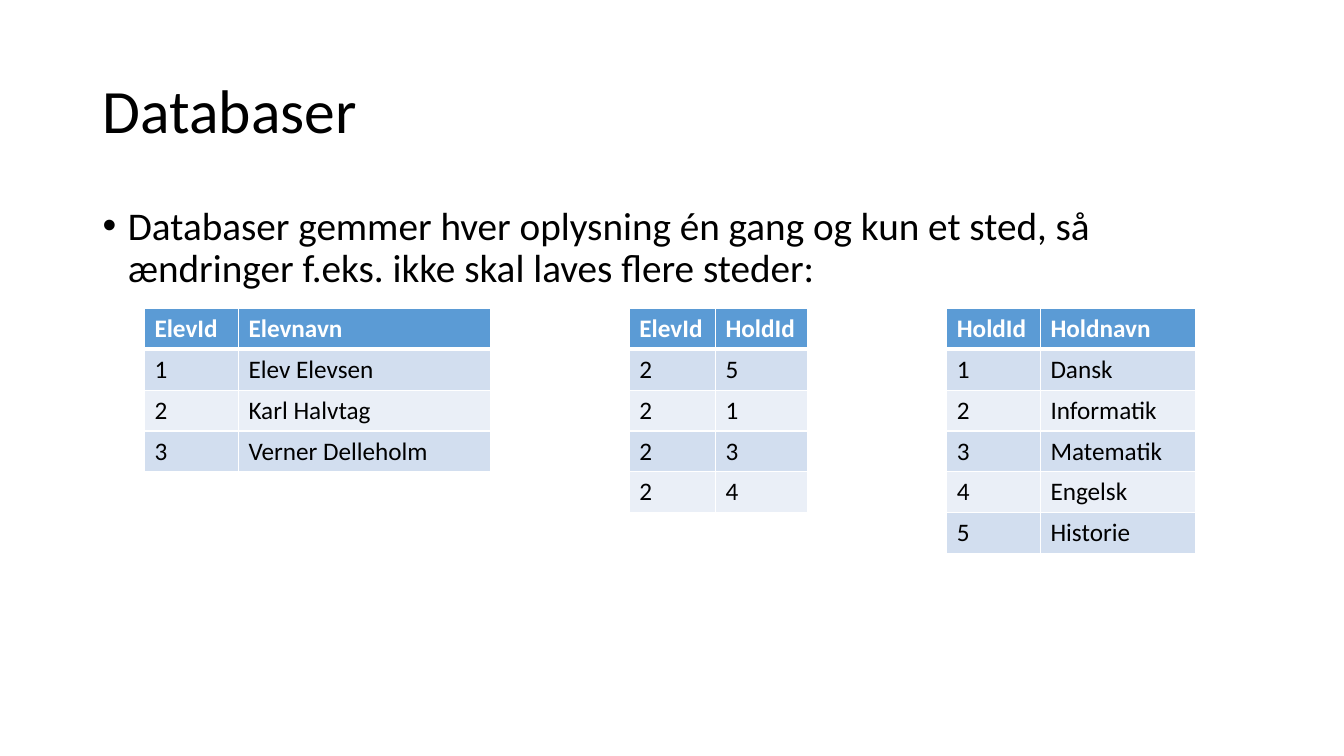
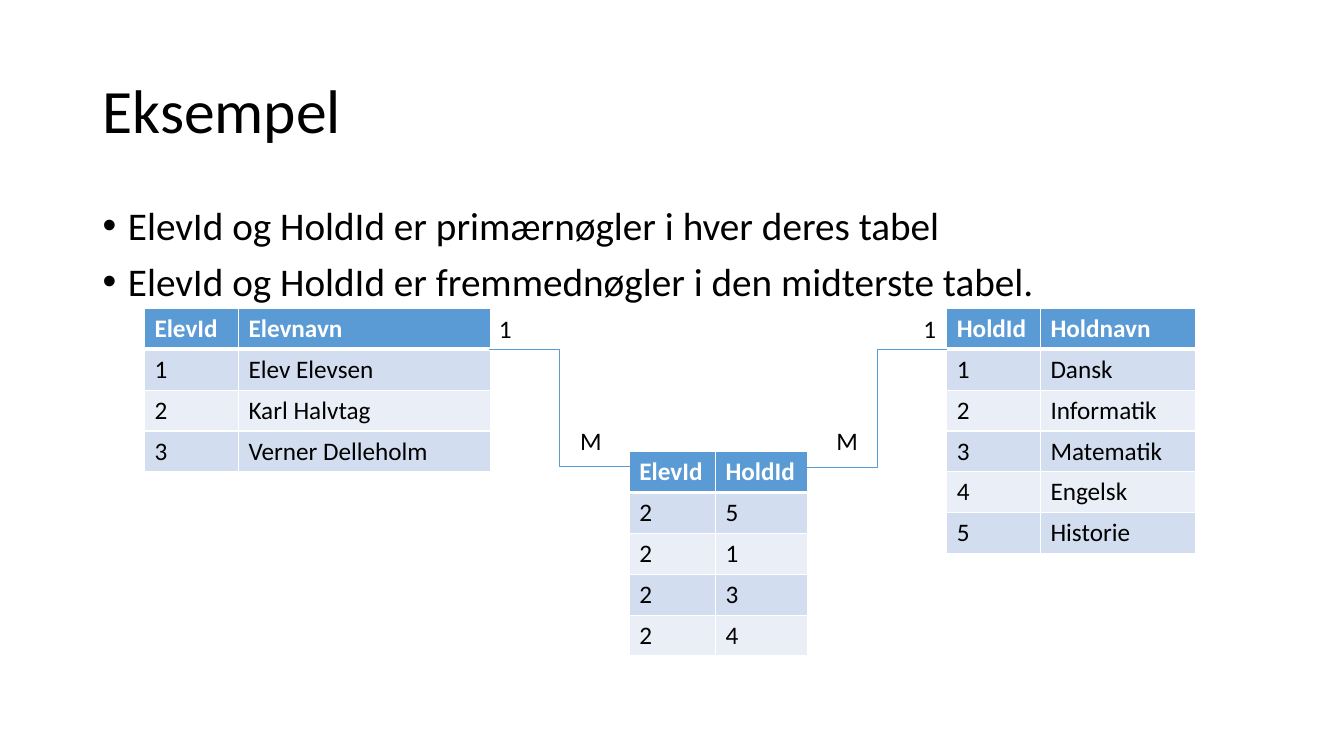
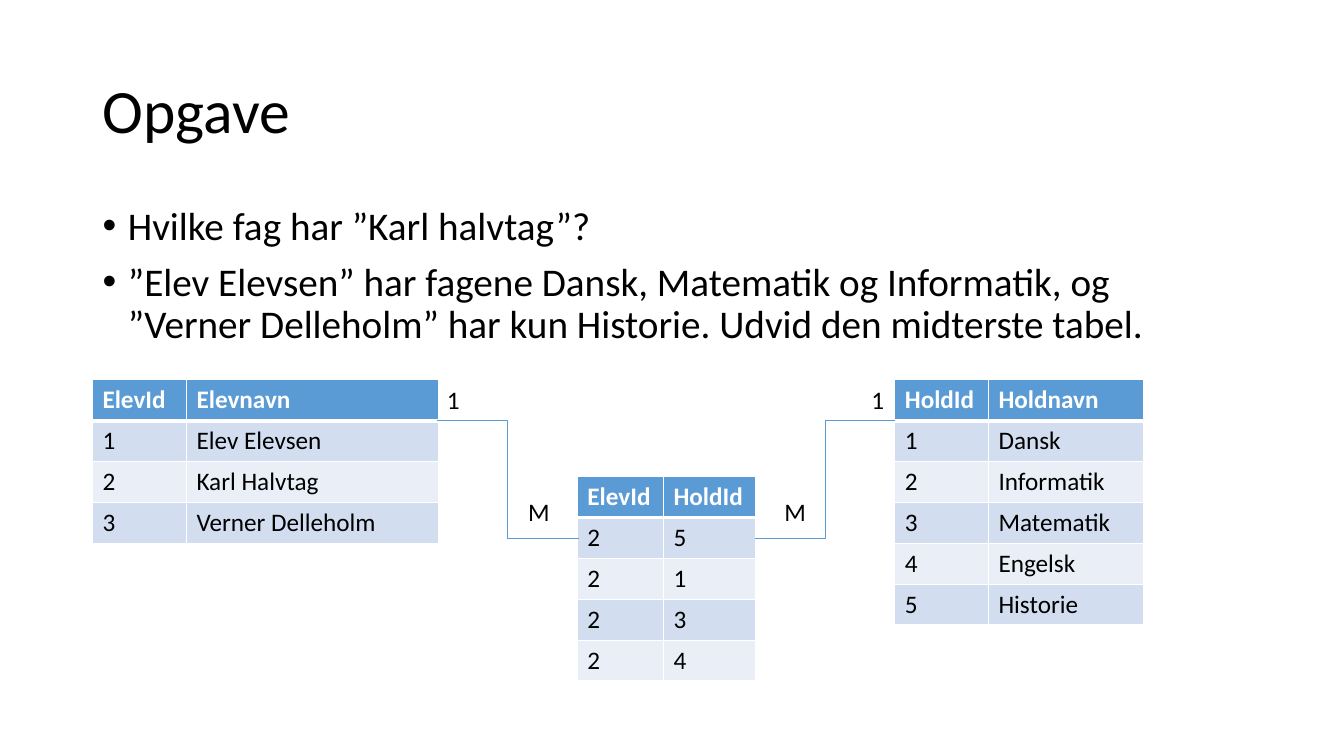
from lxml import etree
from pptx import Presentation
from pptx.dml.color import RGBColor
from pptx.enum.shapes import MSO_CONNECTOR
from pptx.enum.text import MSO_ANCHOR, MSO_AUTO_SIZE, PP_ALIGN
from pptx.oxml.ns import qn
from pptx.util import Cm, Pt

ELBOW = MSO_CONNECTOR.ELBOW
MIDDLE, TOP = MSO_ANCHOR.MIDDLE, MSO_ANCHOR.TOP
LEFT = PP_ALIGN.LEFT
NO_FIT, GROW = MSO_AUTO_SIZE.NONE, MSO_AUTO_SIZE.SHAPE_TO_FIT_TEXT

HUES = {"text": "000000", "white": "FFFFFF", "head": "5B9BD5",
        "odd": "D2DEEF", "even": "EAEFF7"}
FONT = "Calibri"
ROW = 1.03

PUPILS = ((2.37, 6.35), [("ElevId", "Elevnavn"), ("1", "Elev Elevsen"),
                         ("2", "Karl Halvtag"), ("3", "Verner Delleholm")])
JOINS = ((2.17, 2.33), [("ElevId", "HoldId"), ("2", "5"), ("2", "1"),
                        ("2", "3"), ("2", "4")])
TEAMS = ((2.36, 3.9), [("HoldId", "Holdnavn"), ("1", "Dansk"),
                       ("2", "Informatik"), ("3", "Matematik"),
                       ("4", "Engelsk"), ("5", "Historie")])
MID, RIGHT = 12.22, 20.22


class Deck:
    def __init__(self):
        self.prs = Presentation()
        self.prs.slide_width = Cm(33.87)
        self.prs.slide_height = Cm(19.05)
        self.slide = None

    def hue(self, name):
        return RGBColor.from_string(HUES[name])

    def style(self, para, size, name="text", bold=False):
        font = para.font
        font.name, font.size, font.bold = FONT, Pt(size), bold
        font.color.rgb = self.hue(name)

    def place(self, shape, x, y, w, h):
        shape.left, shape.top, shape.width, shape.height = map(Cm, (x, y, w, h))

    def page(self, title, points):
        self.slide = self.prs.slides.add_slide(self.prs.slide_layouts[1])
        self.title(title)
        self.points(points)

    def title(self, text):
        shape = self.slide.shapes.title
        self.place(shape, 2.33, 1.01, 29.21, 3.68)
        frame = shape.text_frame
        frame.text = text
        frame.auto_size, frame.vertical_anchor = NO_FIT, MIDDLE
        para = frame.paragraphs[0]
        para.alignment, para.line_spacing = LEFT, 0.9
        self.style(para, 44)

    def points(self, lines):
        shape = self.slide.placeholders[1]
        self.place(shape, 2.33, 5.07, 29.21, 12.09)
        frame = shape.text_frame
        frame.text = "\n".join(lines)
        frame.auto_size, frame.vertical_anchor = NO_FIT, TOP
        for i, para in enumerate(frame.paragraphs):
            para.line_spacing = 0.9
            para.space_before = Pt(10 if i else 0)
            props = para._p.get_or_add_pPr()
            props.set("marL", str(Cm(0.64)))
            props.set("indent", str(-Cm(0.64)))
            face = etree.SubElement(props, qn("a:buFont"))
            face.set("typeface", "Arial")
            etree.SubElement(props, qn("a:buChar")).set("char", "•")
            self.style(para, 28)

    def edges(self, cell, top, low):
        props = cell._tc.get_or_add_tcPr()
        for side, width in zip("LRTB", (1, 1, top, low)):
            line = etree.SubElement(props, qn("a:ln" + side))
            line.set("w", str(Pt(width)))
            fill = etree.SubElement(line, qn("a:solidFill"))
            etree.SubElement(fill, qn("a:srgbClr")).set("val", HUES["white"])

    def table(self, x, y, data):
        cols, rows = data
        table = self.slide.shapes.add_table(
            len(rows), len(cols), Cm(x), Cm(y),
            Cm(sum(cols)), Cm(ROW * len(rows))).table
        for col, width in zip(table.columns, cols):
            col.width = Cm(width)
        for r, row in enumerate(rows):
            table.rows[r].height = Cm(ROW)
            band = "head" if r == 0 else "odd" if r % 2 else "even"
            for c, text in enumerate(row):
                cell = table.cell(r, c)
                cell.text = text
                self.edges(cell, 3 if r == 1 else 1, 3 if r == 0 else 1)
                cell.fill.solid()
                cell.fill.fore_color.rgb = self.hue(band)
                self.style(cell.text_frame.paragraphs[0], 18,
                           "text" if r else "white", r == 0)

    def trio(self, x, y, drop=0):
        self.table(x, y, PUPILS)
        self.table(x + RIGHT, y, TEAMS)
        self.table(x + MID, y + drop, JOINS)

    def link(self, x1, y1, x2, y2):
        line = self.slide.shapes.add_connector(
            ELBOW, Cm(x1), Cm(y1), Cm(x2), Cm(y2))
        line.line.color.rgb = self.hue("head")
        line.line.width = Pt(0.5)
        etree.SubElement(line._element.spPr, qn("a:effectLst"))

    def label(self, x, y, w, text):
        box = self.slide.shapes.add_textbox(Cm(x), Cm(y), Cm(w), Cm(1.03))
        frame = box.text_frame
        frame.text = text
        frame.word_wrap, frame.auto_size = False, GROW
        self.style(frame.paragraphs[0], 18)

    def links(self, x, y):
        self.link(x + 8.68, y + ROW, x + 12.25, y + 3.99)
        self.link(x + 16.71, y + 4.01, x + RIGHT, y + ROW)
        for dx, dy, w, text in ((8.68, 0, 0.84, "1"), (19.38, 0, 0.84, "1"),
                                (10.73, 2.82, 1.07, "M"),
                                (17.19, 2.82, 1.07, "M")):
            self.label(x + dx, y + dy, w, text)


def main():
    deck = Deck()
    deck.page("Databaser", [
        "Databaser gemmer hver oplysning én gang og kun et sted, "
        "så ændringer f.eks. ikke skal laves flere steder:"])
    deck.trio(3.64, 7.77)

    deck.page("Eksempel", [
        "ElevId og HoldId er primærnøgler i hver deres tabel",
        "ElevId og HoldId er fremmednøgler i den midterste tabel."])
    deck.trio(3.64, 7.77, 3.61)
    deck.links(3.64, 7.77)

    deck.page("Opgave", [
        "Hvilke fag har ”Karl halvtag”?",
        "”Elev Elevsen” har fagene Dansk, Matematik og Informatik, og "
        "”Verner Delleholm” har kun Historie. Udvid den midterste tabel."])
    deck.trio(2.33, 9.57, 2.44)
    deck.links(2.33, 9.57)
    deck.prs.save("out.pptx")


if __name__ == "__main__":
    main()
